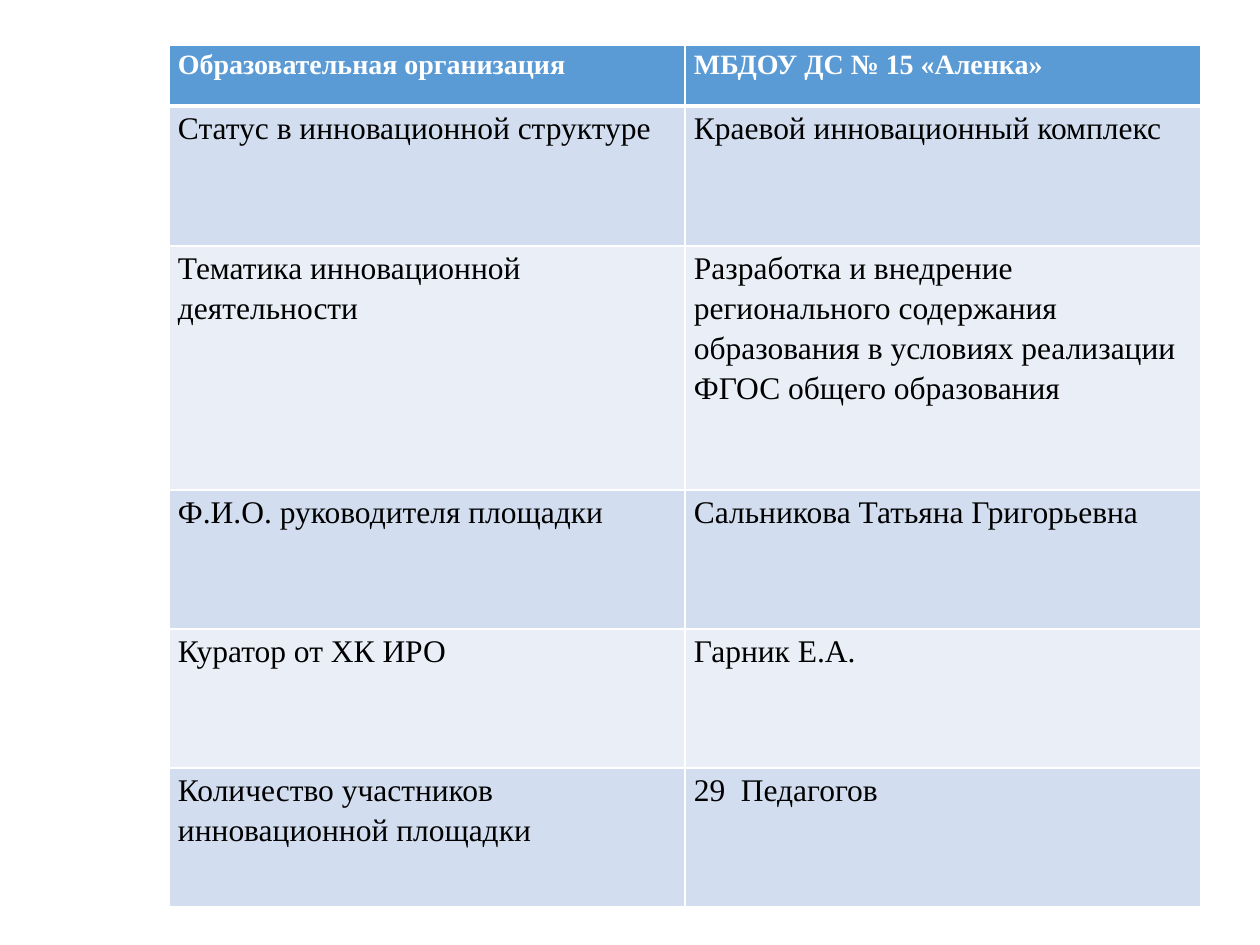
import pptx
import pptx.util
import pptx.dml.color
import pptx.oxml
import pptx.oxml.ns
from dataclasses import dataclass
from lxml import etree

HEADER = ("Образовательная организация", "МБДОУ ДС № 15 «Аленка»")
FACTS = [
    ("Статус в инновационной структуре", "Краевой инновационный комплекс"),
    ("Тематика инновационной деятельности",
     "Разработка и внедрение регионального содержания образования "
     "в условиях реализации ФГОС общего образования"),
    ("Ф.И.О. руководителя площадки", "Сальникова Татьяна Григорьевна"),
    ("Куратор от ХК ИРО", "Гарник Е.А."),
    ("Количество участников инновационной площадки", "Педагогов"),
]
TEACHERS = 29  # shown as the list number of the last cell

LEFT, TOP = 169, 45
COLUMN_WIDTH = 516
ROW_HEIGHTS = [61, 140, 244, 139, 139, 139]
MARGIN = 9
NUMBER_INDENT = 47


@dataclass(frozen=True)
class Theme:
    font: str = "Times New Roman"
    header_size: int = 16
    body_size: int = 18
    spacing: float = 1.15
    header_fill: str = "5B9BD5"
    bands: tuple = ("D2DEEF", "EAEFF7")
    header_text: str = "FFFFFF"
    body_text: str = "000000"
    border: str = "FFFFFF"


THEME = Theme()


def px(n):
    return pptx.util.Emu(round(n * 914400 / 126))


def rgb(value):
    return pptx.dml.color.RGBColor.from_string(value)


def add_borders(cell, widths):
    """Put border lines, given in points by side, ahead of the cell fill."""
    tc_pr = cell._tc.get_or_add_tcPr()
    for i, (side, width) in enumerate(widths.items()):
        tc_pr.insert(i, pptx.oxml.parse_xml(
            f'<a:ln{side} {pptx.oxml.ns.nsdecls("a")} w="{pptx.util.Pt(width)}">'
            f'<a:solidFill><a:srgbClr val="{THEME.border}"/></a:solidFill></a:ln{side}>'))


def number_paragraph(p, start):
    p_pr = p._p.get_or_add_pPr()
    p_pr.set("marL", str(px(NUMBER_INDENT)))
    p_pr.set("indent", str(-px(NUMBER_INDENT)))
    etree.SubElement(p_pr, pptx.oxml.ns.qn("a:buAutoNum"),
                     type="arabicPlain", startAt=str(start))


def fill_cell(cell, text, row):
    header = row == 0
    cell.margin_left = cell.margin_right = px(MARGIN)
    cell.margin_top = cell.margin_bottom = 0
    cell.fill.solid()
    cell.fill.fore_color.rgb = rgb(
        THEME.header_fill if header else THEME.bands[(row - 1) % 2])
    add_borders(cell, {"L": 1, "R": 1, "T": 3 if row == 1 else 1, "B": 3 if header else 1})
    cell.text = text
    p = cell.text_frame.paragraphs[0]
    p.line_spacing = THEME.spacing
    if text == FACTS[-1][1]:
        number_paragraph(p, TEACHERS)
    p.font.name = THEME.font
    p.font.size = pptx.util.Pt(THEME.header_size if header else THEME.body_size)
    p.font.bold = header
    p.font.color.rgb = rgb(THEME.header_text if header else THEME.body_text)


def main():
    prs = pptx.Presentation()
    prs.slide_width, prs.slide_height = px(1260), px(945)
    s = prs.slides.add_slide(prs.slide_layouts[6])

    rows = [HEADER, *FACTS]
    columns = len(HEADER)
    table = s.shapes.add_table(
        len(rows), columns, px(LEFT), px(TOP),
        px(columns * COLUMN_WIDTH), px(sum(ROW_HEIGHTS))).table
    for column in table.columns:
        column.width = px(COLUMN_WIDTH)
    for i, (texts, height) in enumerate(zip(rows, ROW_HEIGHTS)):
        table.rows[i].height = px(height)
        for j, text in enumerate(texts):
            fill_cell(table.cell(i, j), text, i)

    prs.save("out.pptx")


if __name__ == "__main__":
    main()
